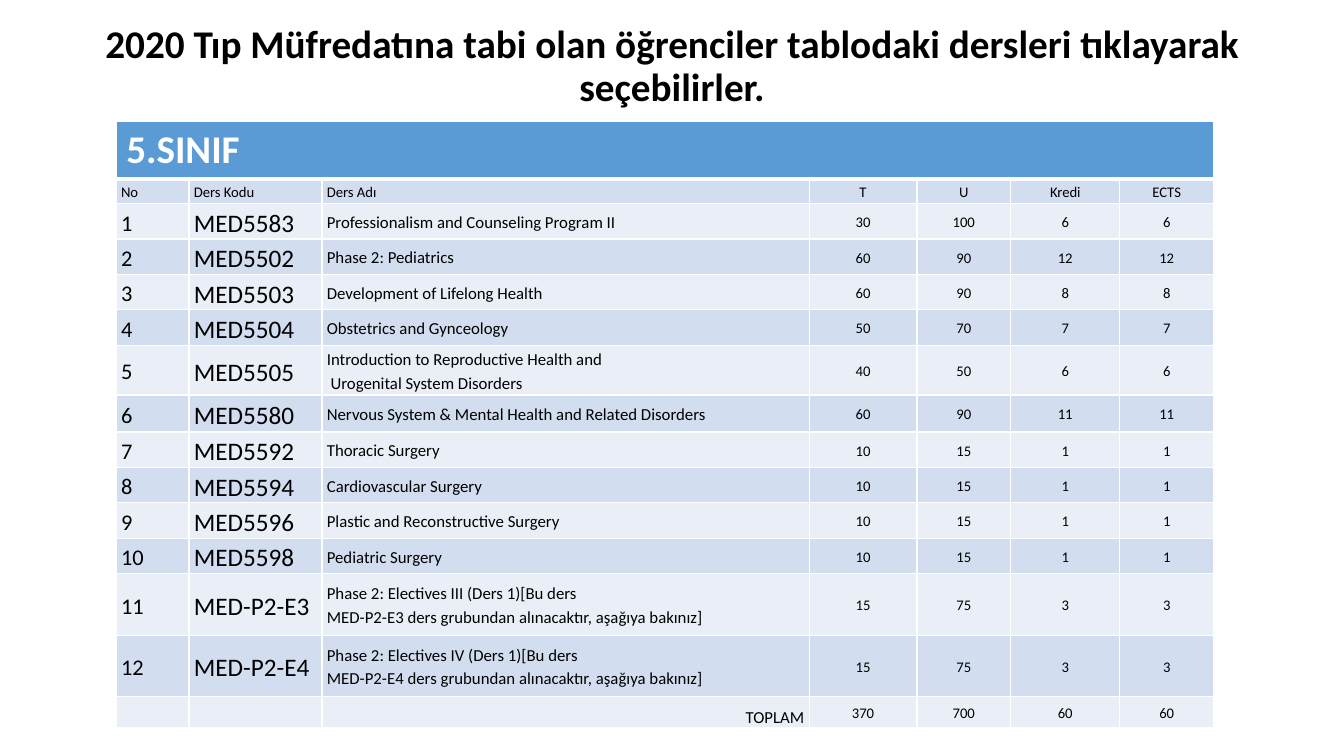
"""Builds the slide with the year 5 course table."""
from lxml.etree import SubElement
from pptx import Presentation
from pptx.dml.color import RGBColor as RGB
from pptx.enum.text import MSO_ANCHOR as ANCHOR, PP_ALIGN as ALIGN
from pptx.oxml.ns import qn
from pptx.util import Pt

TITLE = "2020 Tıp Müfredatına tabi olan öğrenciler tablodaki dersleri tıklayarak seçebilirler."
YEAR = "5.SINIF"
HEADER = ("No", "Ders Kodu", "Ders Adı", "T", "U", "Kredi", "ECTS")
COURSES = [
    ("MED5583", "Professionalism and Counseling Program II", 30, 100, 6),
    ("MED5502", "Phase 2: Pediatrics", 60, 90, 12),
    ("MED5503", "Development of Lifelong Health", 60, 90, 8),
    ("MED5504", "Obstetrics and Gynceology", 50, 70, 7),
    ("MED5505", "Introduction to Reproductive Health and\n Urogenital System Disorders", 40, 50, 6),
    ("MED5580", "Nervous System & Mental Health and Related Disorders", 60, 90, 11),
    ("MED5592", "Thoracic Surgery", 10, 15, 1),
    ("MED5594", "Cardiovascular Surgery", 10, 15, 1),
    ("MED5596", "Plastic and Reconstructive Surgery", 10, 15, 1),
    ("MED5598", "Pediatric Surgery", 10, 15, 1),
    ("MED-P2-E3", "Phase 2: Electives III (Ders 1)[Bu ders \n"
     "MED-P2-E3 ders grubundan alınacaktır, aşağıya bakınız]", 15, 75, 3),
    ("MED-P2-E4", "Phase 2: Electives IV (Ders 1)[Bu ders \n"
     "MED-P2-E4 ders grubundan alınacaktır, aşağıya bakınız]", 15, 75, 3),
]
TOTAL = ("", "", "TOPLAM", 370, 700, 60, 60)

COLORS = {"head": "5B9BD5", "dark": "D2DEEF", "light": "EAEFF7", "white": "FFFFFF", "black": "000000"}
COL_WIDTHS = (52, 95, 348, 77, 67, 78, 67)
ROW_HEIGHT = 17.5
TALL_ROWS = {0: 22.5, 6: 35.5, 7: 26.5, 12: 44, 13: 44}
BODY_SIZES = (16, 18, 12) + (10.5,) * 4
HEAD_SIZES = (10.5,) * 7
CELL = {"margin_left": Pt(3.5), "margin_right": Pt(3.5), "margin_top": 0, "margin_bottom": 0,
        "vertical_anchor": ANCHOR.MIDDLE}


def apply(target, formats):
    for name, value in formats.items():
        setattr(target, name, value)


def write(tf, text, size, color, bold, align, spacing):
    p = tf.paragraphs[0]
    p.text = text
    apply(p, {"alignment": align, "line_spacing": spacing})
    for r in p.runs:
        apply(r.font, {"name": "Calibri", "size": Pt(size), "bold": bold})
        r.font.color.rgb = RGB.from_string(COLORS[color])
    for br in p._p.findall(qn("a:br")):
        SubElement(br, qn("a:rPr"), sz=str(int(size * 100)))


def style_cell(cell, fill, bottom=1):
    tc_pr = cell._tc.get_or_add_tcPr()
    for side, width in (("L", 1), ("R", 1), ("T", 1), ("B", bottom)):
        ln = SubElement(tc_pr, qn(f"a:ln{side}"), w=str(Pt(width)))
        SubElement(SubElement(ln, qn("a:solidFill")), qn("a:srgbClr"), val=COLORS["white"])
    cell.fill.solid()
    cell.fill.fore_color.rgb = RGB.from_string(COLORS[fill])


def add_title(slide):
    sp = slide.shapes.title
    apply(sp, {"left": Pt(66), "top": Pt(20), "width": Pt(828), "height": Pt(56)})
    apply(sp.text_frame, {"word_wrap": True, "vertical_anchor": ANCHOR.MIDDLE})
    write(sp.text_frame, TITLE, 28, "black", True, ALIGN.CENTER, 0.9)


def add_courses(slide):
    numbered = [(i, *course, course[-1]) for i, course in enumerate(COURSES, 1)]
    rows = [HEADER, *numbered, TOTAL]
    frame = slide.shapes.add_table(len(rows) + 1, len(HEADER), Pt(83), Pt(86.5),
                                   Pt(sum(COL_WIDTHS)), Pt(419))
    table = frame.table
    for col, width in zip(table.columns, COL_WIDTHS):
        col.width = Pt(width)
    for i, row in enumerate(table.rows):
        row.height = Pt(TALL_ROWS.get(i, ROW_HEIGHT))
    frame.height = Pt(419)

    for cell in table.rows[0].cells:
        style_cell(cell, "head", 3)
    year = table.cell(0, 0)
    year.merge(table.cell(0, len(HEADER) - 1))
    write(year.text_frame, YEAR, 28, "white", True, ALIGN.LEFT, 1.0)

    for i, values in enumerate(rows, 1):
        sizes = HEAD_SIZES if values is HEADER else BODY_SIZES
        for j, value in enumerate(values):
            cell = table.cell(i, j)
            style_cell(cell, "dark" if i % 2 else "light")
            apply(cell, CELL)
            align = ALIGN.CENTER if j > 2 else ALIGN.LEFT
            if value == "TOPLAM":
                cell.vertical_anchor, align = ANCHOR.BOTTOM, ALIGN.RIGHT
            write(cell.text_frame, str(value), sizes[j], "black", False, align, 1.15)


def main():
    prs = Presentation()
    apply(prs, {"slide_width": Pt(960), "slide_height": Pt(540)})
    slide = prs.slides.add_slide(prs.slide_layouts[5])
    add_title(slide)
    add_courses(slide)
    prs.save("out.pptx")


if __name__ == "__main__":
    main()
